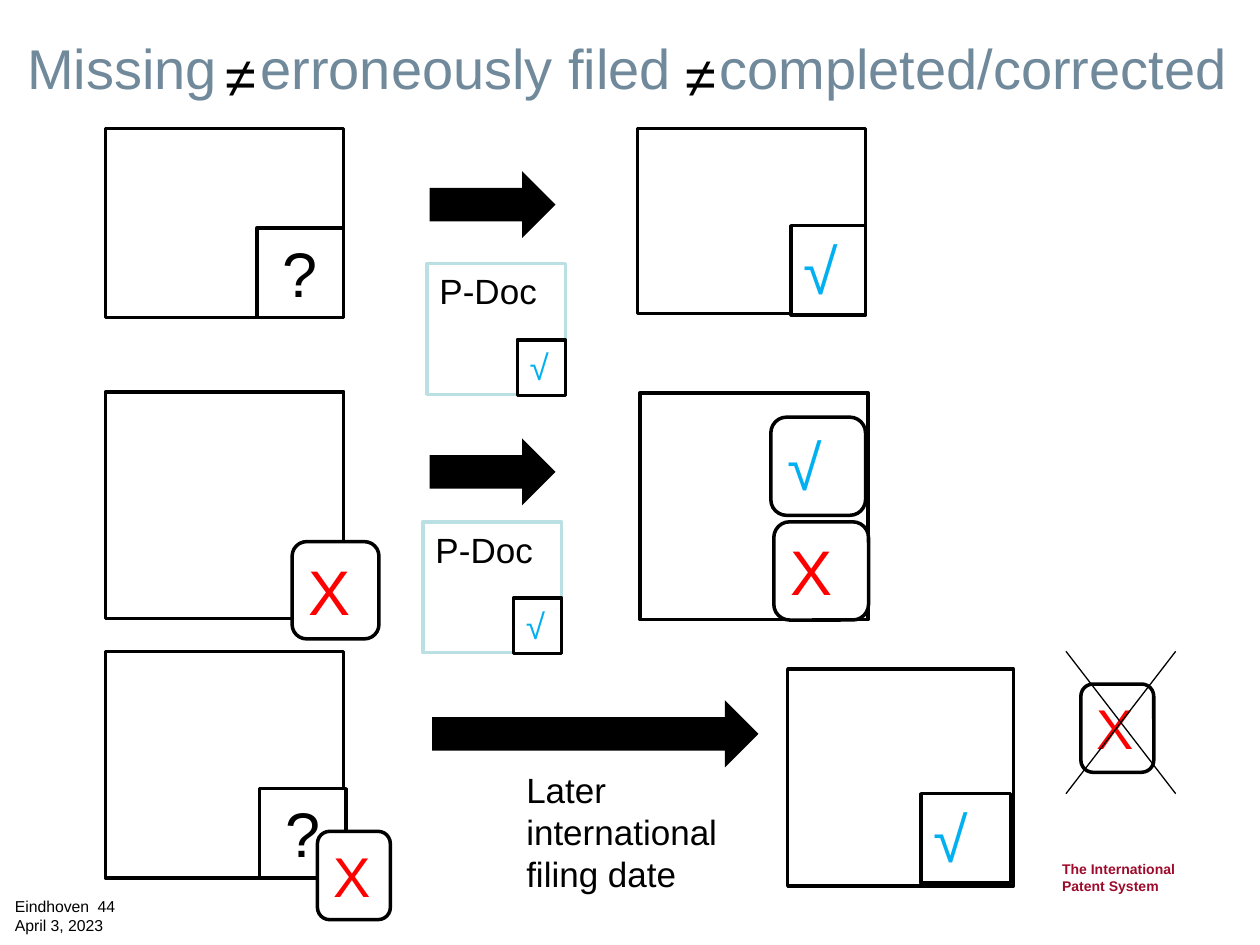
from dataclasses import dataclass
from typing import Optional, Sequence

from lxml.etree import SubElement
from pptx import Presentation
from pptx.dml.color import RGBColor
from pptx.enum.shapes import MSO_CONNECTOR as Link, MSO_SHAPE as Kind
from pptx.enum.text import MSO_ANCHOR as Anchor, PP_ALIGN as Align
from pptx.oxml.ns import qn
from pptx.util import Cm, Pt


@dataclass(frozen=True)
class Theme:
    font: str = "Arial"
    ink: str = "000000"
    paper: str = "FFFFFF"
    title: str = "70899B"
    wrong: str = "FF0000"
    right: str = "00B0F0"
    pale: str = "BBE0E3"
    brand: str = "9D0A2B"
    heading: float = 32
    mark: float = 36
    small_mark: float = 32
    body: float = 20
    footer: float = 9
    credit: float = 8
    outline: float = 2
    hairline: float = 0.75


@dataclass(frozen=True)
class Label:
    text: str
    size: float
    color: str = Theme.ink
    bold: bool = False
    align: Align = Align.LEFT
    tabs: Sequence[float] = ()


@dataclass(frozen=True)
class Part:
    """A box on the page, measured in centimetres."""
    left: float
    top: float
    width: float
    height: float
    label: Optional[Label] = None
    kind: Kind = Kind.RECTANGLE
    line: str = Theme.ink


MISSING = Label("?", Theme.mark, align=Align.CENTER)
WRONG = Label("X", Theme.mark, Theme.wrong)
SMALL_WRONG = Label("X", Theme.small_mark, Theme.wrong)
RIGHT = Label("√", Theme.mark, Theme.right)
SMALL_RIGHT = Label("√", Theme.body, Theme.right)
NOT_EQUAL = Label("≠", Theme.heading)


def write(shape, label: Label, anchor: Anchor = Anchor.TOP) -> None:
    frame = shape.text_frame
    frame.word_wrap = True
    frame.vertical_anchor = anchor
    frame.text = label.text
    for para in frame.paragraphs:
        para.alignment = label.align
        if label.tabs:
            stops = SubElement(para._p.get_or_add_pPr(), qn("a:tabLst"))
            for stop in label.tabs:
                SubElement(stops, qn("a:tab"), pos=str(int(Cm(stop))), algn="l")
        font = para.font
        font.name = Theme.font
        font.size = Pt(label.size)
        font.bold = label.bold
        font.color.rgb = RGBColor.from_string(label.color)


def draw_part(page, part: Part) -> None:
    box = page.shapes.add_shape(part.kind, Cm(part.left), Cm(part.top),
                                Cm(part.width), Cm(part.height))
    box.shadow.inherit = False
    box.fill.solid()
    if part.kind == Kind.RIGHT_ARROW:
        box.fill.fore_color.rgb = RGBColor.from_string(Theme.ink)
        box.line.fill.background()
    else:
        box.fill.fore_color.rgb = RGBColor.from_string(Theme.paper)
        box.line.color.rgb = RGBColor.from_string(part.line)
        box.line.width = Pt(Theme.outline)
    if part.label:
        write(box, part.label)


def draw_text(page, left: float, top: float, width: float, height: float,
              label: Label, anchor: Anchor = Anchor.TOP) -> None:
    box = page.shapes.add_textbox(Cm(left), Cm(top), Cm(width), Cm(height))
    write(box, label, anchor)


def draw_line(page, x1: float, y1: float, x2: float, y2: float) -> None:
    line = page.shapes.add_connector(Link.STRAIGHT, Cm(x1), Cm(y1), Cm(x2), Cm(y2))
    line.line.color.rgb = RGBColor.from_string(Theme.ink)
    line.line.width = Pt(Theme.hairline)
    SubElement(line._element.spPr, qn("a:effectLst"))


def application(top: float, height: float) -> Part:
    return Part(2.13, top, 4.8, height)


def arrow(left: float, top: float, width: float = 2.54) -> Part:
    return Part(left, top, width, 1.35, kind=Kind.RIGHT_ARROW)


def priority_document(left: float, top: float) -> list[Part]:
    return [
        Part(left, top, 2.79, 2.64, Label("P-Doc", Theme.body), line=Theme.pale),
        Part(left + 1.82, top + 1.54, 0.97, 1.12, SMALL_RIGHT),
    ]


def rounded(left: float, top: float, width: float, height: float, label: Label) -> Part:
    return Part(left, top, width, height, label, Kind.ROUNDED_RECTANGLE)


MISSING_CASE = [
    application(2.59, 3.81),
    Part(5.18, 4.6, 1.75, 1.8, MISSING),
    arrow(8.66, 3.45),
    *priority_document(8.61, 5.31),
    Part(12.85, 2.59, 4.6, 3.73),
    Part(15.95, 4.55, 1.5, 1.8, RIGHT),
]
ERRONEOUS_CASE = [
    application(7.9, 4.57),
    rounded(5.89, 10.92, 1.75, 1.96, WRONG),
    arrow(8.66, 8.84),
    *priority_document(8.53, 10.52),
    Part(12.9, 7.92, 4.6, 4.57),
    rounded(15.6, 10.52, 1.91, 1.98, WRONG),
    rounded(15.54, 8.41, 1.91, 1.98, RIGHT),
]
CORRECTED_CASE = [
    application(13.13, 4.57),
    Part(5.23, 15.9, 1.75, 1.8, MISSING),
    rounded(6.4, 16.76, 1.47, 1.78, SMALL_WRONG),
    arrow(8.71, 14.12, 6.58),
    Part(15.88, 13.49, 4.55, 4.37),
    Part(18.57, 16, 1.8, 1.8, RIGHT),
    rounded(21.79, 13.79, 1.47, 1.78, SMALL_WRONG),
]


def main() -> None:
    deck = Presentation()
    deck.slide_width, deck.slide_height = Cm(25.4), Cm(19.05)
    page = deck.slides.add_slide(deck.slide_layouts[6])

    # Footer
    draw_text(page, 0.05, 17.96, 2.7, 1.02,
              Label("Eindhoven\t44\nApril 3, 2023", Theme.footer, tabs=[1.67]))
    draw_text(page, 21.16, 17.22, 3.96, 0.84,
              Label("The International\vPatent System", Theme.credit, Theme.brand, bold=True))

    # Title, with room at the tab stops for the signs
    draw_text(page, 0.3, 0, 25.1, 2.72,
              Label("Missing\terroneously filed\tcompleted/corrected",
                    Theme.heading, Theme.title, tabs=[4.7, 13.95]), Anchor.MIDDLE)
    for left in (4.29, 13.56):
        draw_text(page, left, 0.71, 1.45, 1.63, NOT_EQUAL)

    # The three cases
    for part in MISSING_CASE + ERRONEOUS_CASE + CORRECTED_CASE:
        draw_part(page, part)
    draw_text(page, 10.36, 15.37, 5.21, 2.82,
              Label("Later international filing date", Theme.body))

    # Cross over the removed element
    draw_line(page, 21.49, 16, 23.7, 13.13)
    draw_line(page, 21.49, 13.13, 23.7, 16)

    deck.save("out.pptx")


if __name__ == "__main__":
    main()
